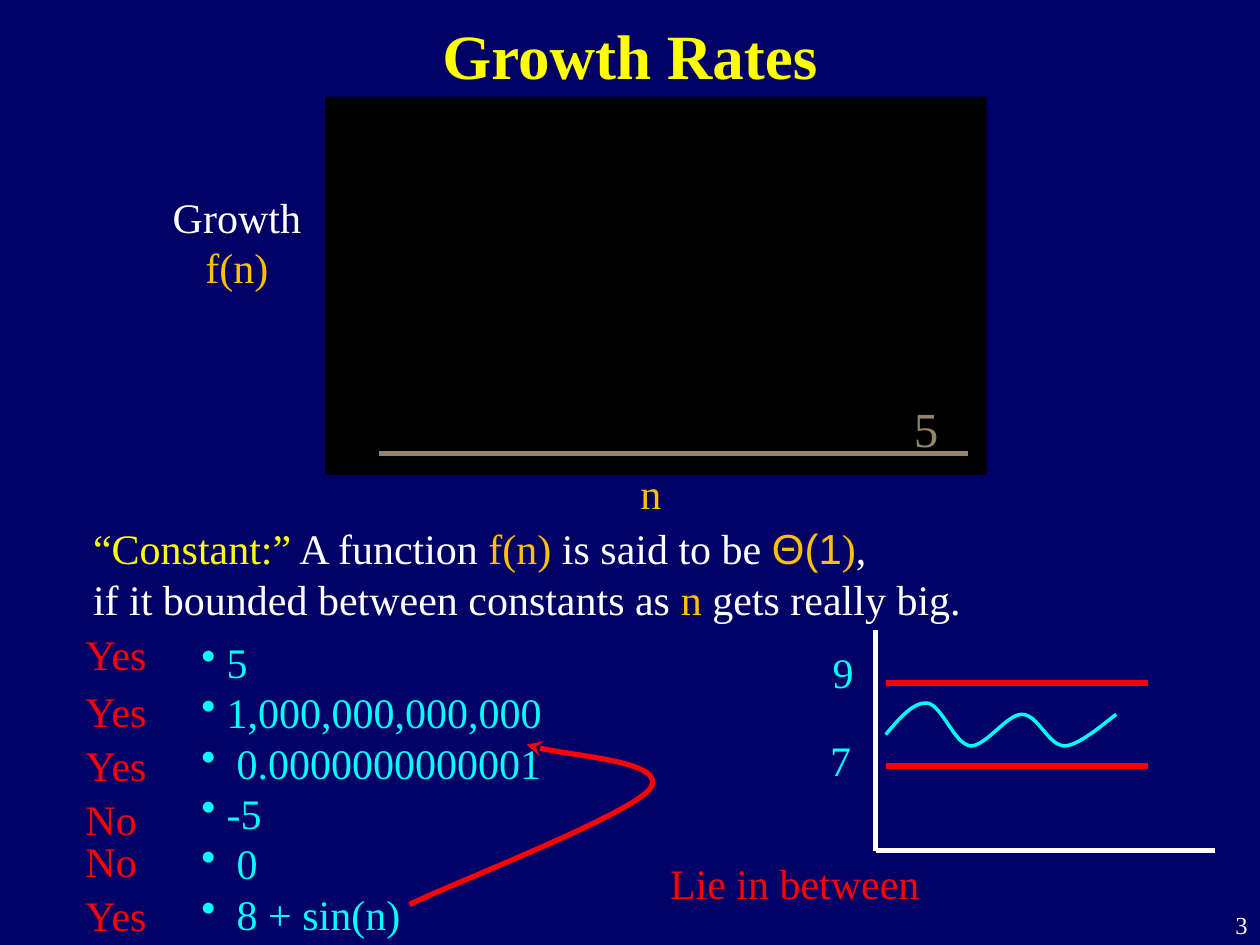
"""Build the slide that explains constant growth rates."""
from dataclasses import dataclass

from lxml import etree
from pptx import Presentation
from pptx import util as u
from pptx.dml.color import RGBColor
from pptx.enum import shapes, text
from pptx.oxml import ns


@dataclass(frozen=True)
class Theme:
    back: str = "000066"
    panel: str = "000000"
    plain: str = "FFFFFF"
    title: str = "FFFF00"
    symbol: str = "FFC000"
    constant: str = "93856D"
    example: str = "00FFFF"
    verdict: str = "FF0000"
    serif: str = "Times New Roman"
    sans: str = "Arial"
    title_size: int = 36
    label_size: int = 28
    body_size: int = 24
    number_size: int = 14
    rule: int = 3
    wave: int = 2


THEME = Theme()
COLUMNS, ROWS = 100, 75
CELL = u.Inches(0.1)
LEFT, CENTER, RIGHT = text.PP_ALIGN.LEFT, text.PP_ALIGN.CENTER, text.PP_ALIGN.RIGHT

PANEL = (25.8, 7.7, 52.5, 30)
EXAMPLES_AT = (15, 50, 29.3, 25.2)
BULLET_INDENT, EXTRA_INDENT = 2, 0.8
EXAMPLES = [("5", 0), ("1,000,000,000,000", 0), ("0.0000000000001", 1),
            ("-5", 0), ("0", 1), ("8 + sin(n)", 1)]
VERDICT_COLUMN = 5.8
VERDICTS = [("Yes", 49.4), ("Yes", 53.9), ("Yes", 58.2),
            ("No", 62.5), ("No", 65.8), ("Yes", 70.1)]
VERDICT_WIDTH = {"Yes": 6.9, "No": 6.1}
BOUNDS = [("7", (64.9, 57.8, 3.7, 5.1), 60.8), ("9", (65.1, 50.8, 3.7, 5.1), 54.2)]
BOUND_COLUMNS = (70.3, 91.1)
AXIS_LEFT, AXIS_RIGHT, AXIS_TOP, AXIS_BOTTOM = 69.5, 96.4, 50, 67.5
ARROW = [(32.5, 71.8), (35.7, 70.2), (50, 64.7), (51.6, 62.6),
         (53.1, 60.5), (43.9, 59.9), (41.8, 59.1)]
WAVE = [(70.3, 58.3), (71.4, 57), (72.5, 55.7), (73.6, 55.8),
        (74.8, 56), (75.7, 59), (77, 59.2), (78.2, 59.3), (79.9, 56.7), (81.1, 56.7),
        (82.4, 56.7), (83.2, 59.2), (84.5, 59.2), (85.7, 59.2), (88, 57.1), (88.6, 56.7)]
DEFINITION = [
    [("“Constant:”", THEME.title, THEME.serif), (" A function", THEME.plain, THEME.serif),
     (" f(n) ", THEME.symbol, THEME.serif), ("is said to be ", THEME.plain, THEME.serif),
     ("Θ(1", THEME.symbol, THEME.sans), (")", THEME.symbol, THEME.serif),
     (",", THEME.plain, THEME.serif)],
    [("if it bounded between constants as ", THEME.plain, THEME.serif),
     ("n", THEME.symbol, THEME.serif), (" gets really big.", THEME.plain, THEME.serif)],
]


def grid(*cells):
    return [round(cell * CELL) for cell in cells]


def color(value):
    return RGBColor.from_string(value)


def style(font, ink, size=THEME.body_size, name=THEME.serif, bold=False):
    font.name, font.size, font.bold = name, u.Pt(size), bold
    font.color.rgb = color(ink)


def add_text(page, place, lines, size=THEME.body_size, align=LEFT,
             bold=False, wrap=False, side=1):
    box = page.shapes.add_textbox(*grid(*place))
    frame = box.text_frame
    frame.word_wrap = wrap
    frame.margin_left, frame.margin_right = grid(side, side)
    for index, (words, ink) in enumerate(lines):
        para = frame.add_paragraph() if index else frame.paragraphs[0]
        para.text, para.alignment = words, align
        style(para.font, ink, size, bold=bold)
    return frame


def add_examples(page):
    lines = [(words, THEME.example) for words, _ in EXAMPLES]
    frame = add_text(page, EXAMPLES_AT, lines)
    for para, (_, extra) in zip(frame.paragraphs, EXAMPLES):
        indent = grid(BULLET_INDENT + extra * EXTRA_INDENT)[0]
        props = para._p.get_or_add_pPr()
        props.set("marL", str(indent))
        props.set("indent", str(-indent))
        bullet = etree.Element(ns.qn("a:buChar"), char="•")
        props.insert(0, bullet)


def add_definition(page):
    box = page.shapes.add_textbox(*grid(6.4, 41, 86.1, 9.1))
    box.text_frame.word_wrap = True
    para = box.text_frame.paragraphs[0]
    for index, line in enumerate(DEFINITION):
        if index:
            para.add_line_break()
        for words, ink, name in line:
            span = para.add_run()
            span.text = words
            style(span.font, ink, name=name)


def add_line(page, start, end, ink):
    line = page.shapes.add_connector(shapes.MSO_CONNECTOR.STRAIGHT, *grid(*start, *end))
    line.line.color.rgb, line.line.width = color(ink), u.Pt(THEME.rule)
    etree.SubElement(line._element.spPr, ns.qn("a:effectLst"))


def add_curve(page, points, ink, width):
    start, *rest = [grid(*point) for point in points]
    builder = page.shapes.build_freeform(*start)
    builder.add_line_segments(rest, close=False)
    curve = builder.convert_to_shape()
    curve.shadow.inherit = False
    curve.fill.background()
    curve.line.color.rgb, curve.line.width = color(ink), u.Pt(width)
    segments = list(curve._element.iter(ns.qn("a:lnTo")))
    outline = segments[0].getparent()
    for first in range(0, len(segments), 3):
        bend = etree.SubElement(outline, ns.qn("a:cubicBezTo"))
        for segment in segments[first:first + 3]:
            bend.append(segment[0])
            outline.remove(segment)
    return curve


def add_growth_panel(page):
    panel = page.shapes.add_shape(shapes.MSO_SHAPE.RECTANGLE, *grid(*PANEL))
    panel.shadow.inherit = False
    panel.fill.solid()
    panel.fill.fore_color.rgb = color(THEME.panel)
    panel.line.fill.background()
    add_text(page, (49.8, 36.6, 3.7, 5), [("n", THEME.symbol)], align=CENTER)
    add_text(page, (9.2, 14.7, 19.2, 9.1),
             [("Growth", THEME.plain), ("f(n)", THEME.symbol)], align=CENTER, wrap=True)
    add_text(page, (7.5, 0.8, 85, 12.5), [("Growth Rates", THEME.title)],
             THEME.title_size, CENTER, bold=True, wrap=True)
    add_line(page, (30.1, 36), (76.8, 36), THEME.constant)
    add_text(page, (69.5, 31.1, 8, 5.7), [("5", THEME.constant)],
             THEME.label_size, CENTER, side=3)


def add_bounded_plot(page):
    arrow = add_curve(page, ARROW, THEME.verdict, THEME.rule)
    etree.SubElement(arrow.line._get_or_add_ln(), ns.qn("a:tailEnd"), type="stealth")
    add_text(page, (52.2, 67.6, 22, 5.1), [("Lie in between", THEME.verdict)])
    corner = (AXIS_LEFT, AXIS_BOTTOM)
    add_line(page, (AXIS_LEFT, AXIS_TOP), corner, THEME.plain)
    add_line(page, corner, (AXIS_RIGHT, AXIS_BOTTOM), THEME.plain)
    add_curve(page, WAVE, THEME.example, THEME.wave)
    left, right = BOUND_COLUMNS
    for words, place, row in BOUNDS:
        add_line(page, (left, row), (right, row), THEME.verdict)
        add_text(page, place, [(words, THEME.example)])


def main():
    deck = Presentation()
    deck.slide_width, deck.slide_height = grid(COLUMNS, ROWS)
    page = deck.slides.add_slide(deck.slide_layouts[6])
    page.background.fill.solid()
    page.background.fill.fore_color.rgb = color(THEME.back)
    add_text(page, (95, 71.7, 5, 3.3), [("3", THEME.plain)],
             THEME.number_size, RIGHT, wrap=True)
    add_growth_panel(page)
    add_examples(page)
    for words, row in VERDICTS:
        add_text(page, (VERDICT_COLUMN, row, VERDICT_WIDTH[words], 5),
                 [(words, THEME.verdict)])
    add_bounded_plot(page)
    add_definition(page)
    deck.save("out.pptx")


if __name__ == "__main__":
    main()
